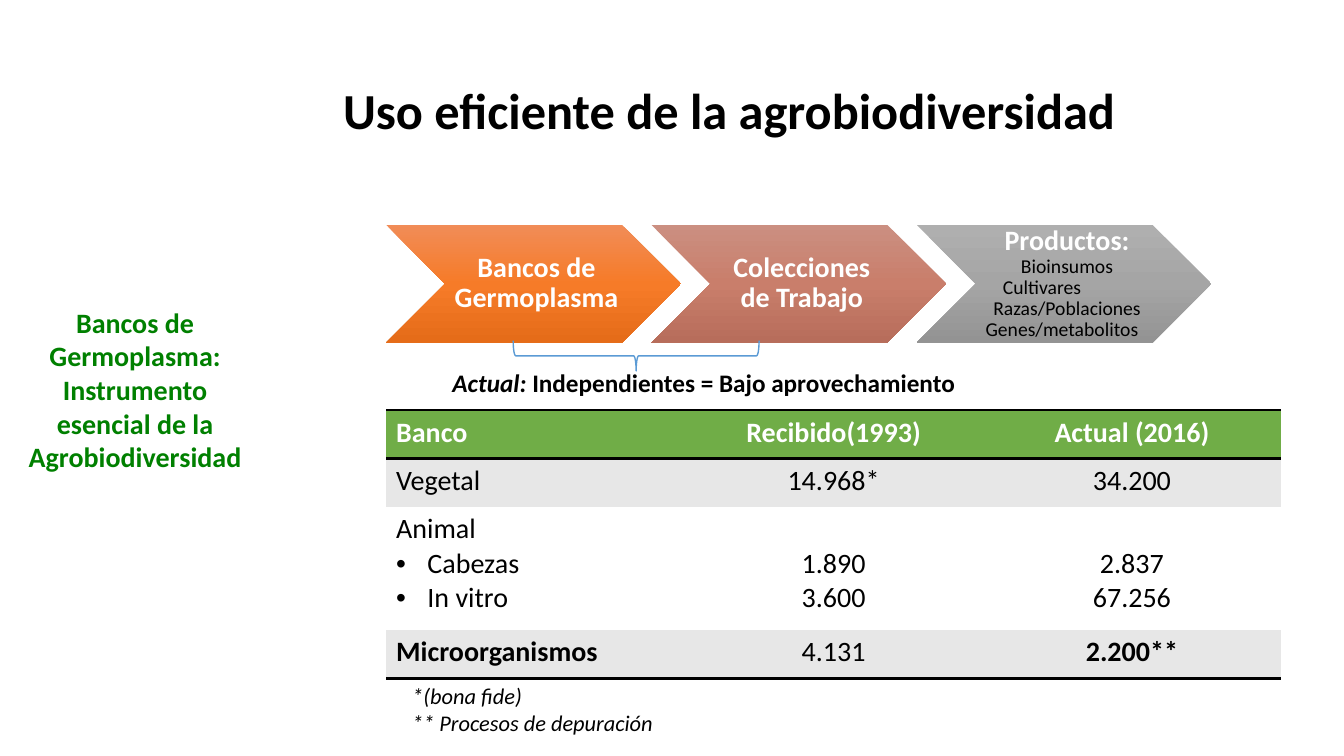
from copy import deepcopy
from typing import NamedTuple

from lxml.etree import SubElement
from pptx import Presentation
from pptx.dml.color import RGBColor
from pptx.enum.shapes import MSO_SHAPE as Shape
from pptx.enum.text import MSO_ANCHOR as Anchor, PP_ALIGN as Align
from pptx.oxml.ns import qn
from pptx.util import Inches, Pt

WIDTH, HEIGHT = Inches(13.33), Inches(7.5)
FONT = "Calibri"
BLACK = RGBColor(0x00, 0x00, 0x00)
WHITE = RGBColor(0xFF, 0xFF, 0xFF)
DARK_GREEN = RGBColor(0x00, 0x80, 0x00)
HEADER_GREEN = RGBColor(0x70, 0xAD, 0x47)
BAND_GRAY = RGBColor(0xE7, 0xE7, 0xE7)
BRACE_BLUE = RGBColor(0x5B, 0x9B, 0xD5)
ORANGES = [RGBColor(0xF1, 0x8C, 0x57), RGBColor(0xF6, 0x7B, 0x28), RGBColor(0xE5, 0x6C, 0x19)]
CLAYS = [RGBColor(0xCB, 0x8F, 0x81), RGBColor(0xC9, 0x7E, 0x6B), RGBColor(0xB7, 0x6D, 0x5B)]
GRAYS = [RGBColor(0xAF, 0xAF, 0xAF), RGBColor(0xA5, 0xA5, 0xA5), RGBColor(0x93, 0x93, 0x93)]
PLAIN_TABLE = "{2D5ABB26-0587-4C30-8999-92F81FD0307C}"


class Box(NamedTuple):
    """A rectangle on the slide."""
    left: int
    top: int
    width: int
    height: int


def area(left, top, width, height):
    """Return a box given in percent of the slide's size."""
    return Box(int(WIDTH * left / 100), int(HEIGHT * top / 100),
               int(WIDTH * width / 100), int(HEIGHT * height / 100))


def add_run(paragraph, text, size, color=BLACK, bold=False, italic=False):
    """Append one formatted run."""
    run = paragraph.add_run()
    run.text = text
    font = run.font
    font.name, font.size, font.bold, font.italic = FONT, Pt(size), bold, italic
    font.color.rgb = color


def next_paragraph(frame, index):
    """Return the first paragraph of a frame, or a new one after it."""
    return frame.add_paragraph() if index else frame.paragraphs[0]


def add_text(slide, box, lines, align=Align.LEFT, wrap=True):
    """Place a text box whose lines are lists of run arguments."""
    frame = slide.shapes.add_textbox(*box).text_frame
    frame.word_wrap = wrap
    for index, runs in enumerate(lines):
        paragraph = next_paragraph(frame, index)
        paragraph.alignment = align
        for run in runs:
            add_run(paragraph, *run)


def add_title(slide, box):
    """Move the title placeholder and fill it."""
    title = slide.shapes.title
    title.left, title.top, title.width, title.height = box
    frame = title.text_frame
    frame.vertical_anchor = Anchor.MIDDLE
    paragraph = frame.paragraphs[0]
    paragraph.alignment = Align.CENTER
    paragraph.line_spacing = 0.9
    add_run(paragraph, "Uso eficiente de la agrobiodiversidad", 36, BLACK, True)


def fill_gradient(shape, colors):
    """Fill a shape from top to bottom with three colours."""
    shape.fill.gradient()
    shape.fill.gradient_angle = 270
    stop_list = shape._element.spPr.find(".//" + qn("a:gsLst"))
    stop_list.insert(1, deepcopy(stop_list[0]))
    for stop, color, position in zip(shape.fill.gradient_stops, colors, (0, 0.5, 1)):
        stop.color.rgb = color
        stop.position = position


def add_chevron(slide, box, colors, heading):
    """Draw one step of the chain and return its text frame."""
    chevron = slide.shapes.add_shape(Shape.CHEVRON, *box)
    chevron.shadow.inherit = False
    chevron.line.fill.background()
    fill_gradient(chevron, colors)
    frame = chevron.text_frame
    frame.word_wrap = True
    frame.vertical_anchor = Anchor.MIDDLE
    frame.margin_left = Inches(0.09)
    frame.margin_top = frame.margin_right = frame.margin_bottom = Inches(0.03)
    paragraph = frame.paragraphs[0]
    paragraph.alignment = Align.CENTER
    paragraph.line_spacing = 0.9
    add_run(paragraph, heading, 20, WHITE, True)
    return frame


def add_chain(slide, box):
    """Lay out the three overlapping steps, with products in the last."""
    steps = [("Bancos de Germoplasma", ORANGES), ("Colecciones de Trabajo", CLAYS),
             ("Productos:", GRAYS)]
    width = int(box.width / 2.8)
    for index, (heading, colors) in enumerate(steps):
        left = box.left + int(index * 0.9 * width)
        frame = add_chevron(slide, Box(left, box.top, width, box.height), colors, heading)
    products = [("Bioinsumos", Align.CENTER, 0, 0), ("Cultivares", Align.LEFT, 0.18, 0),
                ("Razas/Poblaciones", Align.CENTER, 0, 0),
                ("Genes/metabolitos", Align.CENTER, 0, 0.1)]
    for text, align, left_margin, right_margin in products:
        paragraph = frame.add_paragraph()
        paragraph.alignment = align
        paragraph.line_spacing = 0.9
        properties = paragraph._p.get_or_add_pPr()
        properties.set("marL", str(Inches(left_margin)))
        properties.set("marR", str(Inches(right_margin)))
        add_run(paragraph, text, 14)


def add_brace(slide, box):
    """Draw a brace that opens upwards across the box."""
    left = box.left + (box.width - box.height) // 2
    top = box.top + (box.height - box.width) // 2
    brace = slide.shapes.add_shape(Shape.RIGHT_BRACE, left, top, box.height, box.width)
    brace.rotation = 90
    brace.shadow.inherit = False
    brace.fill.background()
    brace.line.color.rgb = BRACE_BLUE
    brace.line.width = Pt(1)


def add_border(cell, side):
    """Rule one side of a cell in black."""
    line = SubElement(cell._tc.get_or_add_tcPr(), qn("a:" + side), w=str(Pt(2)))
    SubElement(SubElement(line, qn("a:solidFill")), qn("a:srgbClr"), val=str(BLACK))


def add_bullet(paragraph):
    """Give a paragraph a hanging bullet."""
    properties = paragraph._p.get_or_add_pPr()
    properties.set("marL", str(Inches(0.31)))
    properties.set("indent", str(-Inches(0.31)))
    SubElement(properties, qn("a:buFont"), typeface="Arial")
    SubElement(properties, qn("a:buChar"), char="•")


def add_bank_table(slide, box):
    """Build the table of germplasm banks."""
    rows = [(["Banco"], ["Recibido(1993)"], ["Actual (2016)"]),
            (["Vegetal"], ["14.968*"], ["34.200"]),
            (["Animal", "Cabezas", "In vitro"], ["1.890", "3.600"], ["2.837", "67.256"]),
            (["Microorganismos"], ["4.131"], ["2.200**"])]
    fills = [HEADER_GREEN, BAND_GRAY, WHITE, BAND_GRAY]
    borders = [("lnT", "lnB"), (), (), ("lnB",)]
    weights = [1, 1, 2.54, 1]
    bold_texts = {"Microorganismos", "2.200**", *(texts[0] for texts in rows[0])}
    table = slide.shapes.add_table(len(rows), 3, *box).table
    table.first_row = table.horz_banding = False
    table._tbl.tblPr.find(qn("a:tableStyleId")).text = PLAIN_TABLE
    for row_index, row in enumerate(rows):
        table.rows[row_index].height = int(box.height * weights[row_index] / sum(weights))
        for column_index, texts in enumerate(row):
            cell = table.cell(row_index, column_index)
            for side in borders[row_index]:
                add_border(cell, side)
            cell.fill.solid()
            cell.fill.fore_color.rgb = fills[row_index]
            if len(texts) == 2:
                cell.margin_top = Inches(0.39)
            for index, text in enumerate(texts):
                paragraph = next_paragraph(cell.text_frame, index)
                paragraph.alignment = Align.CENTER if column_index else Align.LEFT
                if index and not column_index:
                    add_bullet(paragraph)
                add_run(paragraph, text, 20, BLACK if row_index else WHITE, text in bold_texts)


def main():
    """Build the slide and save it."""
    presentation = Presentation()
    presentation.slide_width, presentation.slide_height = WIDTH, HEIGHT
    slide = presentation.slides.add_slide(presentation.slide_layouts[5])
    add_title(slide, area(15.38, 5.33, 77.78, 19.33))
    message = "Bancos de Germoplasma: Instrumento esencial de la Agrobiodiversidad"
    add_text(slide, area(0.45, 39.73, 19.2, 23.73), [[(message, 20, DARK_GREEN, True)]], Align.CENTER)
    add_chain(slide, area(28.73, 29.73, 61.4, 15.6))
    caption = [("Actual:", 18, BLACK, True, True),
               (" Independientes = Bajo aprovechamiento", 18, BLACK, True)]
    add_text(slide, area(32.93, 47.87, 39.53, 5.33), [caption], wrap=False)
    add_brace(slide, area(38.18, 45.07, 18.3, 4))
    add_bank_table(slide, area(28.73, 54.27, 66.6, 35.47))
    notes = ["*(bona fide)", "** Procesos de depuración"]
    add_text(slide, area(29.93, 89.6, 22.35, 8.53), [[(note, 16, BLACK, False, True)] for note in notes])
    presentation.save("out.pptx")


if __name__ == "__main__":
    main()
